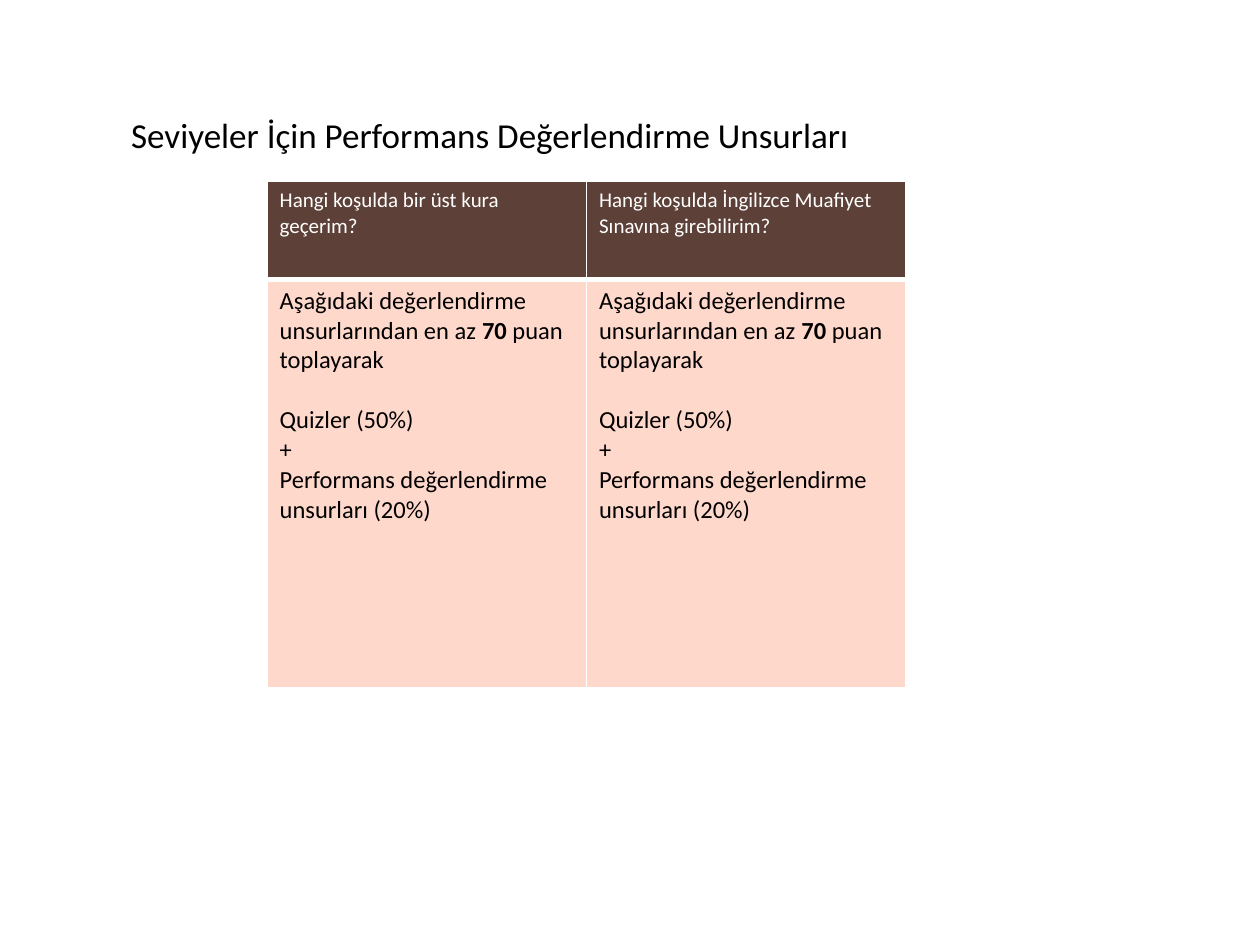
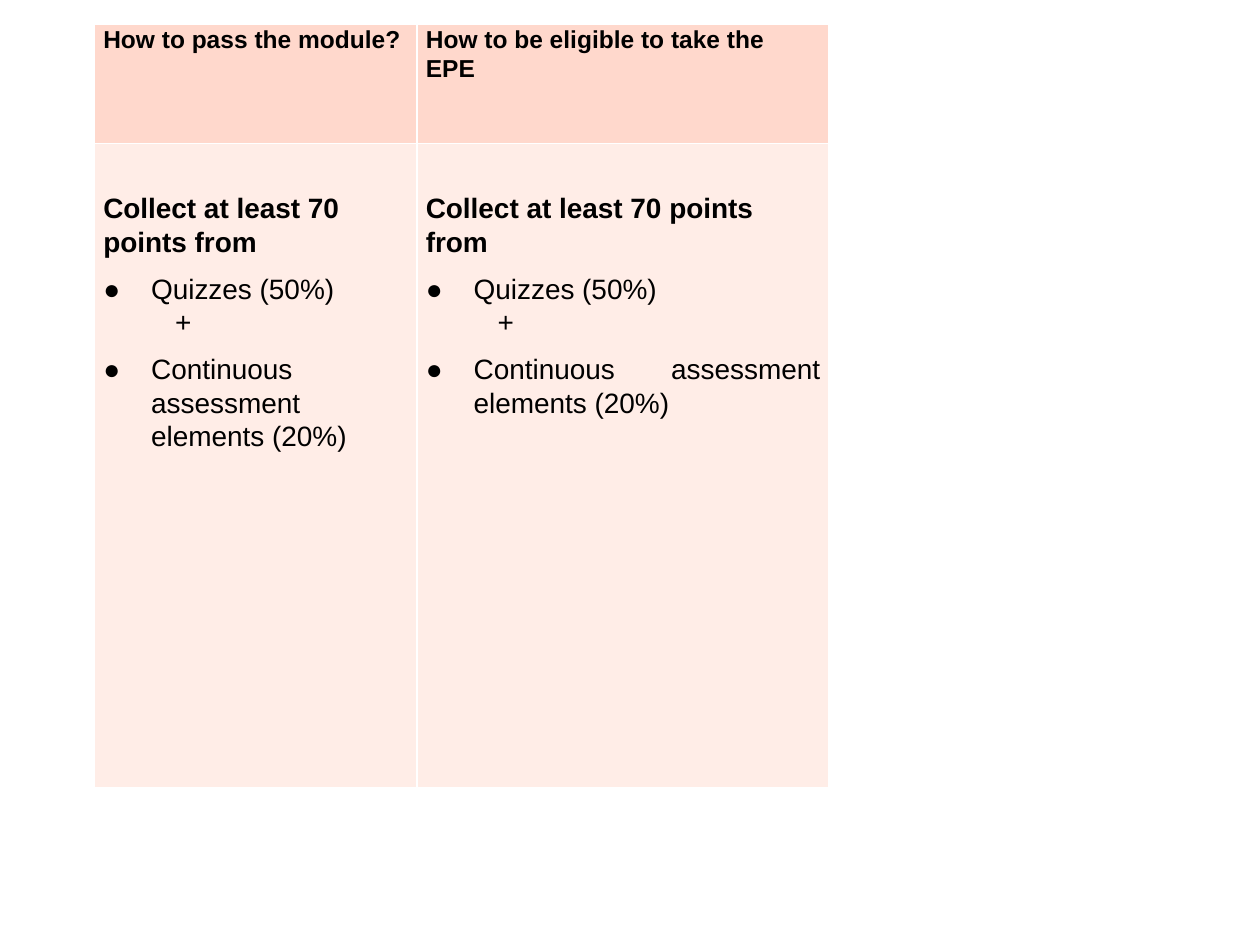
"""Build two slides that compare passing a module with exam eligibility."""
import pptx
import pptx.dml.color
import pptx.enum.text
import pptx.oxml.ns
import pptx.util
from lxml import etree

Inches, Pt = pptx.util.Inches, pptx.util.Pt
ALIGN = pptx.enum.text.PP_ALIGN
COLORS = {"white": "FFFFFF", "black": "000000", "brown": "5D4037",
          "peach": "FFD8CC", "pale": "FFEDE7"}

TITLE = "Seviyeler İçin Performans Değerlendirme Unsurları"
PLAIN = {}
HEADING = {"spacing": 1.07}
BULLET = {"spacing": 1.07, "before": 8, "align": ALIGN.JUSTIFY,
          "left": 0.38, "hanging": 0.38, "bullet": "●"}
PLUS = {"spacing": 1.07, "left": 0.57}

TURKISH_RULES = [
    (PLAIN, [("Aşağıdaki değerlendirme unsurlarından en az ", False),
             ("70", True), (" puan toplayarak", False)]),
    ({"before": 17.1}, [("Quizler (50%)", False)]),
    (PLAIN, [("+", False)]),
    (PLAIN, [("Performans değerlendirme unsurları (20%)", False)]),
]
ENGLISH_RULES = [
    (HEADING, [("Collect at least 70 points from", True)]),
    (BULLET, [("Quizzes (50%)", False)]),
    (PLUS, [("+", False)]),
    (BULLET, [("Continuous assessment elements (20%)", False)]),
]
TURKISH = {
    "at": (2.12, 1.44), "columns": (2.535, 2.535), "font": "Calibri",
    "side": 0.1, "divider": 3,
    "rows": [
        {"height": 0.78, "fill": "brown", "color": "white", "size": 12, "top": 0.05,
         "cells": [[(PLAIN, [("Hangi koşulda bir üst kura geçerim?", False)])],
                   [(PLAIN, [("Hangi koşulda İngilizce Muafiyet Sınavına girebilirim?", False)])]]},
        {"height": 3.24, "fill": "peach", "color": "black", "size": 14, "top": 0.05,
         "cells": [TURKISH_RULES] * 2},
    ],
}
ENGLISH = {
    "at": (0.75, 0.19), "columns": (2.56, 3.27), "font": "Arial",
    "side": 0.07, "divider": 1,
    "rows": [
        {"height": 0.95, "fill": "peach", "color": "black", "size": 14, "top": 0,
         "cells": [[(HEADING, [("How to pass the module?", True)])],
                   [(HEADING, [("How to be eligible to take the EPE", True)])]]},
        {"height": 5.11, "fill": "pale", "color": "black", "size": 16, "top": 0.38,
         "cells": [ENGLISH_RULES] * 2},
    ],
}


def rgb(name):
    return pptx.dml.color.RGBColor.from_string(COLORS[name])


def add_element(parent, tag, **attributes):
    return etree.SubElement(parent, pptx.oxml.ns.qn(tag), attributes)


def add_span(para, text, font, size, color, bold=False):
    span = para.add_run()
    span.text = text
    span.font.name = font
    span.font.size = Pt(size)
    span.font.bold = bold
    span.font.color.rgb = rgb(color)


def format_para(para, style):
    para.alignment = style.get("align", ALIGN.LEFT)
    para.line_spacing = style.get("spacing", 1.0)
    para.space_before = Pt(style.get("before", 0))
    properties = para._p.get_or_add_pPr()
    properties.set("marL", str(Inches(style.get("left", 0))))
    properties.set("indent", str(-Inches(style.get("hanging", 0))))
    if "bullet" in style:
        add_element(add_element(properties, "a:buClr"), "a:srgbClr", val=COLORS["black"])
        add_element(properties, "a:buFont", typeface="Arial")
        add_element(properties, "a:buChar", char=style["bullet"])


def add_borders(cell, top, bottom):
    properties = cell._tc.get_or_add_tcPr()
    for side, width in (("L", 1), ("R", 1), ("T", top), ("B", bottom)):
        line = add_element(properties, f"a:ln{side}", w=str(Pt(width)))
        add_element(add_element(line, "a:solidFill"), "a:srgbClr", val=COLORS["white"])


def fill_cell(cell, lines, row, font, side):
    cell.fill.solid()
    cell.fill.fore_color.rgb = rgb(row["fill"])
    cell.margin_left = cell.margin_right = Inches(side)
    cell.margin_top = Inches(row["top"])
    cell.margin_bottom = Inches(min(row["top"], 0.05))
    frame = cell.text_frame
    for index, (style, spans) in enumerate(lines):
        para = frame.add_paragraph() if index else frame.paragraphs[0]
        format_para(para, style)
        for text, bold in spans:
            add_span(para, text, font, row["size"], row["color"], bold)


def add_comparison(page, data):
    rows, columns = data["rows"], data["columns"]
    height = sum(row["height"] for row in rows)
    left, top = data["at"]
    table = page.shapes.add_table(len(rows), len(columns), Inches(left), Inches(top),
                                  Inches(sum(columns)), Inches(height)).table
    table.first_row = table.horz_banding = False
    for column, width in zip(table.columns, columns):
        column.width = Inches(width)
    edges = [1, data["divider"], 1]
    for r, row in enumerate(rows):
        table.rows[r].height = Inches(row["height"])
        for c, lines in enumerate(row["cells"]):
            cell = table.cell(r, c)
            add_borders(cell, edges[r], edges[r + 1])
            fill_cell(cell, lines, row, data["font"], data["side"])


def add_title(page, text):
    box = page.shapes.title
    box.left, box.top, box.width, box.height = map(Inches, (0.94, 0.85, 6.95, 0.44))
    frame = box.text_frame
    frame.word_wrap = True
    frame.auto_size = pptx.enum.text.MSO_AUTO_SIZE.NONE
    frame.vertical_anchor = pptx.enum.text.MSO_ANCHOR.TOP
    para = frame.paragraphs[0]
    format_para(para, PLAIN)
    add_span(para, text, "Calibri", 20, "black")


def main():
    deck = pptx.Presentation()
    deck.slide_width, deck.slide_height = Inches(10), Inches(7.5)
    title_only, blank = deck.slide_layouts[5], deck.slide_layouts[6]
    page = deck.slides.add_slide(title_only)
    add_title(page, TITLE)
    add_comparison(page, TURKISH)
    add_comparison(deck.slides.add_slide(blank), ENGLISH)
    deck.save("out.pptx")


if __name__ == "__main__":
    main()
